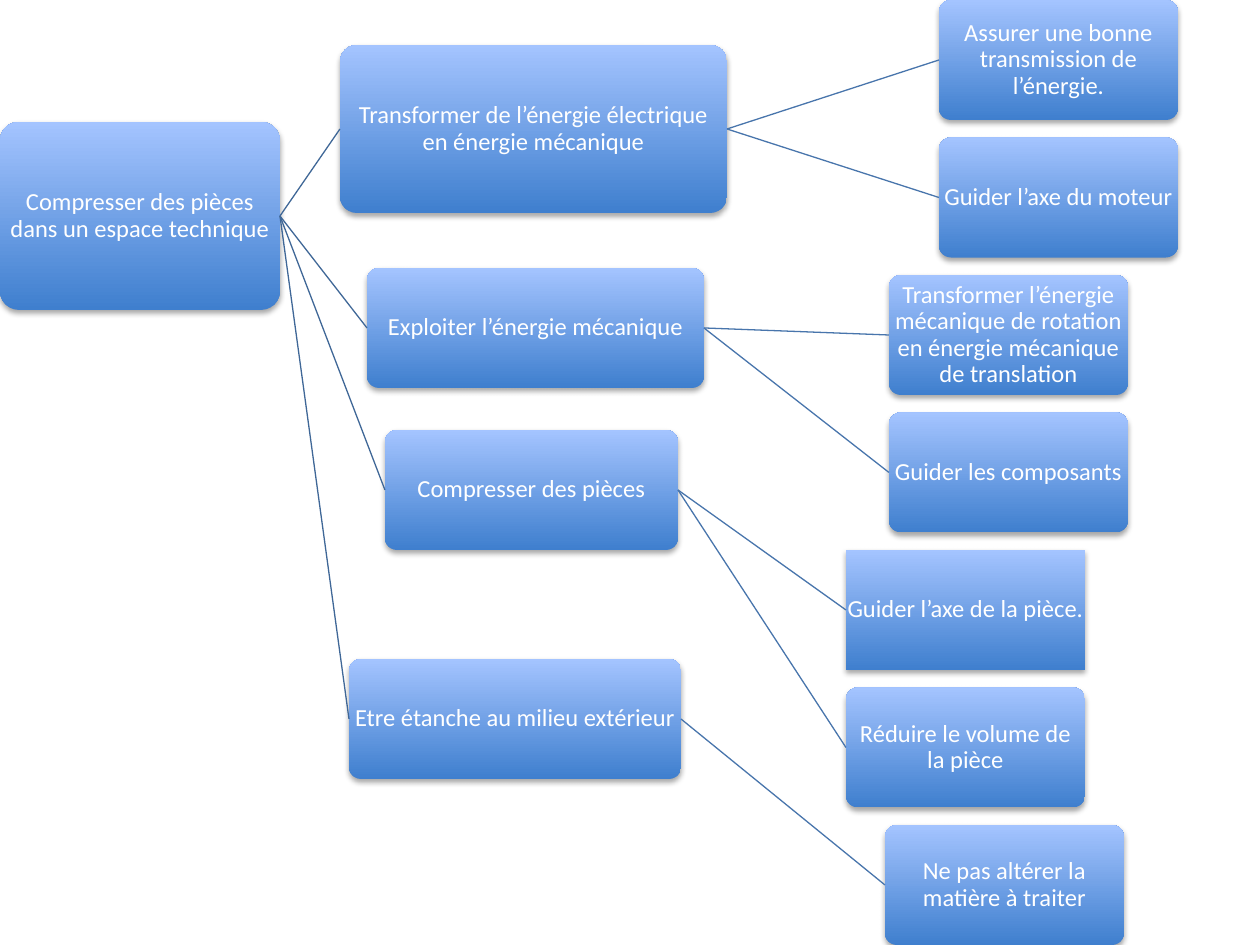
"""Build a function tree slide: one main function, its sub-functions and their details."""
import lxml.etree
import pptx
import pptx.dml.color
import pptx.enum.shapes
import pptx.enum.text
import pptx.oxml
import pptx.oxml.ns
import pptx.util

PX = 914400 // 126
LEAF_WIDTH, BOX_HEIGHT, LEAF_PITCH = 239, 120, 137.5
ROUNDED = pptx.enum.shapes.MSO_SHAPE.ROUNDED_RECTANGLE
SQUARE = pptx.enum.shapes.MSO_SHAPE.RECTANGLE
RIGHT_SITE, LEFT_SITE = 3, 1
SHADOW = (
    '<a:outerShdw xmlns:a="http://schemas.openxmlformats.org/drawingml/2006/main"'
    ' blurRad="40000" dist="23000" dir="5400000" rotWithShape="0">'
    '<a:srgbClr val="000000"><a:alpha val="35000"/></a:srgbClr></a:outerShdw>'
)

presentation = pptx.Presentation()
presentation.slide_width = pptx.util.Inches(10)
presentation.slide_height = pptx.util.Inches(7.5)
slide = presentation.slides.add_slide(presentation.slide_layouts[6])


def rgb(value):
    return pptx.dml.color.RGBColor.from_string(value)


def add_function(text, *, left, top, width, height=BOX_HEIGHT, outline=ROUNDED,
                 parent=None, link="4875AC", size=14, color="FFFFFF"):
    box = slide.shapes.add_shape(
        outline, *(round(length * PX) for length in (left, top, width, height)))
    if outline == ROUNDED:
        box.adjustments[0] = 0.1
    box.fill.gradient()
    box.fill.gradient_angle = 90
    for stop, shade in zip(box.fill.gradient_stops, ("3F7FCE", "A4C4FF")):
        stop.color.rgb = rgb(shade)
    box.line.fill.background()
    box.shadow.inherit = False
    effects = box._element.spPr.find(pptx.oxml.ns.qn("a:effectLst"))
    effects.append(pptx.oxml.parse_xml(SHADOW))

    frame = box.text_frame
    frame.word_wrap = True
    frame.vertical_anchor = pptx.enum.text.MSO_ANCHOR.MIDDLE
    frame.margin_left = frame.margin_right = PX
    frame.margin_top = frame.margin_bottom = PX
    paragraph = frame.paragraphs[0]
    paragraph.alignment = pptx.enum.text.PP_ALIGN.CENTER
    paragraph.line_spacing = 0.9
    run = paragraph.add_run()
    run.text = text
    run.font.name = "Calibri"
    run.font.size = pptx.util.Pt(size)
    run.font.color.rgb = rgb(color)

    if parent is not None:
        branch = slide.shapes.add_connector(
            pptx.enum.shapes.MSO_CONNECTOR.STRAIGHT, 0, 0, 0, 0)
        branch.begin_connect(parent, RIGHT_SITE)
        branch.end_connect(box, LEFT_SITE)
        branch.line.color.rgb = rgb(link)
        branch.line.width = pptx.util.Pt(0.75)
        lxml.etree.SubElement(branch._element.spPr, pptx.oxml.ns.qn("a:effectLst"))
    return box


main_function = add_function("Compresser des pièces dans un espace technique",
                             left=0, top=122, width=280, height=188)

sub_functions = [
    ("Transformer de l’énergie électrique en énergie mécanique", 340, 45, 387, 168, 939,
     [("Assurer une bonne transmission de l’énergie.", ROUNDED),
      ("Guider l’axe du moteur", ROUNDED)]),
    ("Exploiter l’énergie mécanique", 367, 268, 337, BOX_HEIGHT, 889,
     [("Transformer l’énergie mécanique de rotation en énergie mécanique de translation",
       ROUNDED),
      ("Guider les composants", ROUNDED)]),
    ("Compresser des pièces", 385, 430, 293, BOX_HEIGHT, 846,
     [("Guider l’axe de la pièce.", SQUARE),
      ("Réduire le volume de la pièce", ROUNDED)]),
    ("Etre étanche au milieu extérieur", 349, 659, 332, BOX_HEIGHT, 885,
     [("Ne pas altérer la matière à traiter", ROUNDED)]),
]

detail_row = 0
for name, left, top, width, height, detail_left, details in sub_functions:
    sub_function = add_function(name, left=left, top=top, width=width, height=height,
                                parent=main_function, link="3F6797")
    for detail, outline in details:
        add_function(detail, left=detail_left, top=detail_row * LEAF_PITCH,
                     width=LEAF_WIDTH, outline=outline, parent=sub_function)
        detail_row += 1

presentation.save("out.pptx")
